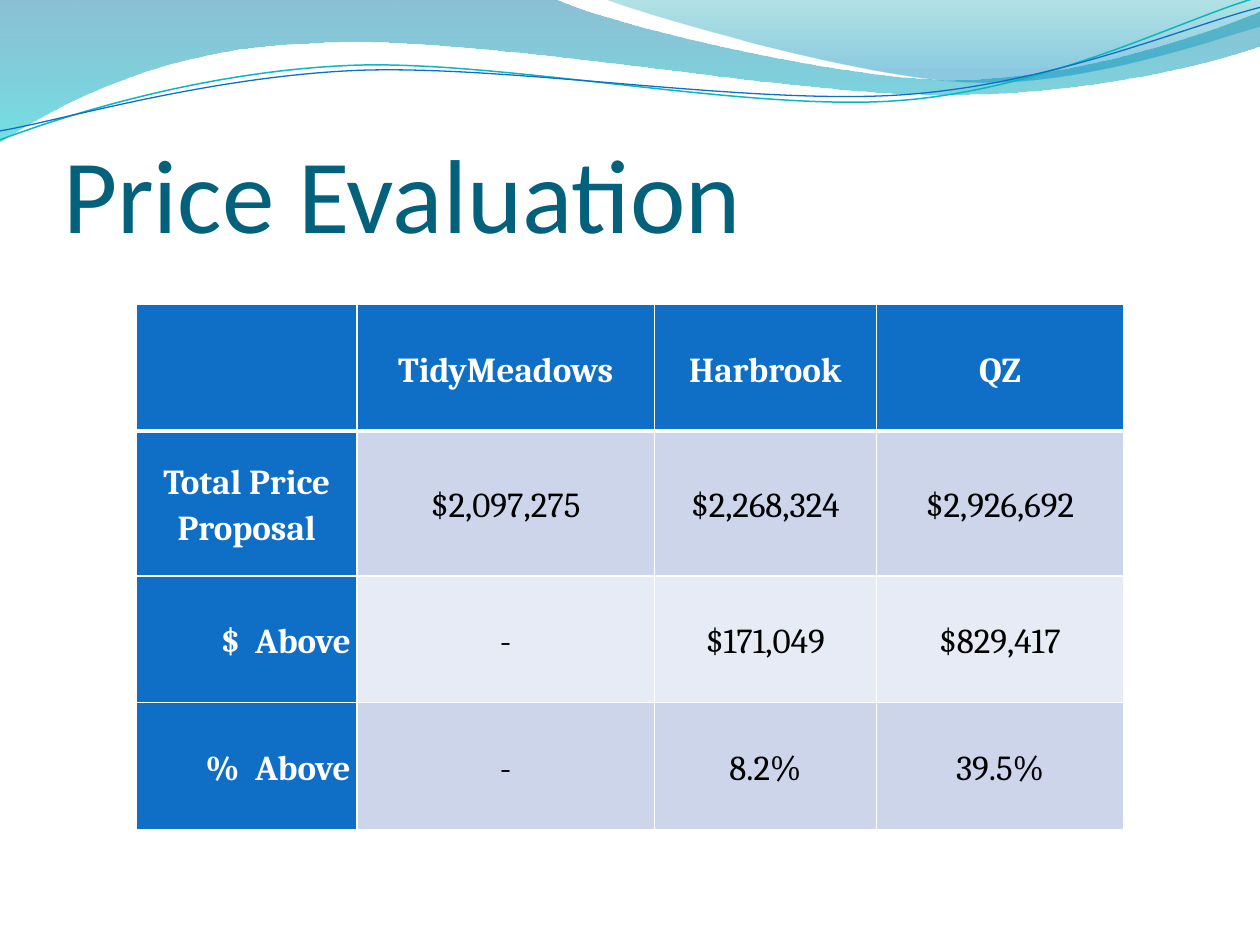
from lxml import etree
from pptx import Presentation
from pptx import util as u
from pptx.dml.color import RGBColor
from pptx.enum import text as t
from pptx.oxml import ns

# Content
TITLE = "Price Evaluation"
ROWS = [
    ["", "TidyMeadows", "Harbrook", "QZ"],
    ["Total Price Proposal", "$2,097,275", "$2,268,324", "$2,926,692"],
    ["$  Above", "-", "$171,049", "$829,417"],
    ["%  Above", "-", "8.2%", "39.5%"],
]
WIDTHS = [4.45, 5.99, 4.48, 4.98]
HEIGHTS = [2.55, 2.92, 2.55, 2.56]

THEME = {
    "head": "Calibri", "body": "Cambria", "big": 60, "size": 20,
    "title": "04617B", "main": "0F6FC6", "white": "FFFFFF", "black": "000000",
    "bands": ["CCD5EA", "E7EBF5"], "rule": 1, "thick": 3,
}

# Outlines in cm: a pair of numbers is a corner, six numbers are a curve
WAVES = [
    ([(0, 0), (11.18, -.03), (12.09, .43, 16.87, 1.6, 19.25, 1.6),
      (21.67, 1.6, 24.33, .66, 25.4, .23), (25.43, .91),
      (24.97, 1.12, 22.1, 1.93, 18.95, 1.91),
      (15.8, 1.91, 9.7, .71, 6.53, .86), (3.28, .91, 1.17, 2.11, -.03, 2.87)],
     [(0, "0074A1", 45), (1, "00C6CF", 55)]),
    ([(12.17, -.03), (12.93, .28, 17.32, 1.57, 19.53, 1.65),
      (21.74, 1.75, 24.41, .81, 25.4, .53), (25.4, 0)],
     [(0, "00A1A9", 30), (.8, "008BBF", 45)]),
]
LINES = [
    ([(0, 2.82), (1.22, 2.36, 4.01, 1.45, 7.04, 1.32),
      (10.03, 1.19, 15.06, 2.26, 18.11, 2.03),
      (21.16, 1.8, 23.83, .38, 25.35, -.05)], "0AB8BF", .85),
    ([(0, 2.64), (1.19, 2.44, 4.17, 1.55, 7.19, 1.42),
      (10.24, 1.3, 15.16, 2.13, 18.21, 1.91),
      (21.23, 1.7, 23.9, .53, 25.4, .15)], "0F6FC6", .75),
]


def rgb(code):
    return RGBColor.from_string(code)


def draw(slide, parts, close):
    """Build the outline from its points, then bend triples into curves."""
    pts = [(u.Cm(p[i]), u.Cm(p[i + 1])) for p in parts for i in range(0, len(p), 2)]
    pen = slide.shapes.build_freeform(*pts[0])
    pen.add_line_segments(pts[1:], close=close)
    shape = pen.convert_to_shape()
    shape.shadow.inherit = False
    legs = iter(list(shape.element.iter(ns.qn("a:lnTo"))))
    for part in parts[1:]:
        first = next(legs)
        if len(part) == 6:
            first.addprevious(curve := etree.Element(ns.qn("a:cubicBezTo")))
            for leg in (first, next(legs), next(legs)):
                curve.append(leg[0])
                leg.getparent().remove(leg)
    return shape


def shade(shape, stops):
    shape.line.fill.background()
    shape.fill.gradient()
    shape.fill.gradient_angle = 270
    for stop, (pos, code, _) in zip(shape.fill.gradient_stops, stops):
        stop.position = pos
        stop.color.rgb = rgb(code)
    marks = shape.element.spPr.iter(ns.qn("a:srgbClr"))
    for mark, (_, _, alpha) in zip(list(marks), stops):
        etree.SubElement(mark, ns.qn("a:alpha"), val=str(alpha * 1000))


def edge(cell, row):
    """Draw white rules, with a thick one under the header."""
    props = cell._tc.get_or_add_tcPr()
    for i, side in enumerate("LRTB"):
        thick = (row, side) in [(0, "B"), (1, "T")]
        width = u.Pt(THEME["thick" if thick else "rule"])
        line = etree.Element(ns.qn("a:ln" + side), w=str(width))
        fill = etree.SubElement(line, ns.qn("a:solidFill"))
        etree.SubElement(fill, ns.qn("a:srgbClr"), val=THEME["white"])
        props.insert(i, line)


def style(cell, row, col, words):
    head = row == 0 or col == 0
    cell.text = words
    cell.vertical_anchor = t.MSO_ANCHOR.MIDDLE
    cell.margin_left = cell.margin_right = u.Cm(.13)
    cell.margin_top = cell.margin_bottom = 0
    cell.fill.solid()
    cell.fill.fore_color.rgb = rgb(THEME["main"] if head else THEME["bands"][(row - 1) % 2])
    edge(cell, row)
    para = cell.text_frame.paragraphs[0]
    right = col == 0 and row > 1
    para.alignment = t.PP_ALIGN.RIGHT if right else t.PP_ALIGN.CENTER
    para.line_spacing = 1.15
    font = para.font
    font.name, font.size, font.bold = THEME["body"], u.Pt(THEME["size"]), head
    font.color.rgb = rgb(THEME["white" if head else "black"])


def main():
    deck = Presentation()
    deck.slide_width, deck.slide_height = u.Cm(25.4), u.Cm(19.05)
    slide = deck.slides.add_slide(deck.slide_layouts[5])

    # Waves and lines along the top
    for parts, stops in WAVES:
        shade(draw(slide, parts, True), stops)
    for parts, code, width in LINES:
        shape = draw(slide, parts, False)
        shape.fill.background()
        shape.line.color.rgb = rgb(code)
        shape.line.width = u.Pt(width)

    # Title, in front of the waves
    title = slide.shapes.title
    title.element.getparent().append(title.element)
    title.left, title.top = u.Cm(1.27), u.Cm(1.96)
    title.width, title.height = u.Cm(22.86), u.Cm(3.18)
    frame = title.text_frame
    frame.text = TITLE
    frame.auto_size = t.MSO_AUTO_SIZE.NONE
    frame.vertical_anchor = t.MSO_ANCHOR.BOTTOM
    frame.margin_left = frame.margin_right = frame.margin_bottom = 0
    frame.margin_top = u.Cm(.13)
    para = frame.paragraphs[0]
    para.alignment = t.PP_ALIGN.LEFT
    para.font.name, para.font.size = THEME["head"], u.Pt(THEME["big"])
    para.font.color.rgb = rgb(THEME["title"])

    # Price table
    table = slide.shapes.add_table(
        len(ROWS), len(WIDTHS), u.Cm(2.75), u.Cm(6.14),
        u.Cm(sum(WIDTHS)), u.Cm(sum(HEIGHTS))).table
    table.first_col = True
    for col, width in zip(table.columns, WIDTHS):
        col.width = u.Cm(width)
    for r, (height, cells) in enumerate(zip(HEIGHTS, ROWS)):
        table.rows[r].height = u.Cm(height)
        for c, words in enumerate(cells):
            style(table.cell(r, c), r, c, words)

    deck.save("out.pptx")


if __name__ == "__main__":
    main()
